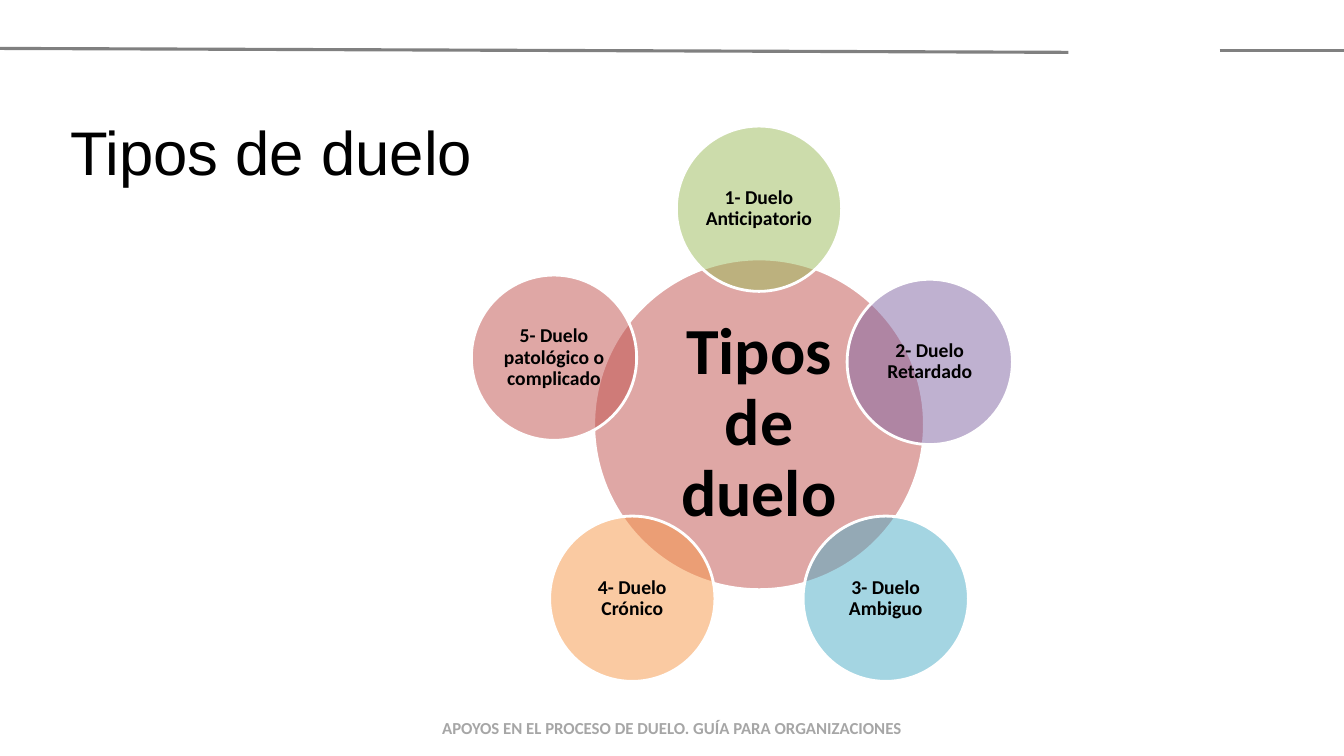
from math import cos, radians, sin

from lxml import etree
from pptx import Presentation
from pptx.dml.color import RGBColor
from pptx.enum import shapes, text
from pptx.oxml.ns import qn
from pptx.util import Pt

TITLE = "Tipos de duelo"
FOOTER = "APOYOS EN EL PROCESO DE DUELO. GUÍA PARA ORGANIZACIONES"
# label, fill, shift from the regular place on the ring
TYPES = [
    ("1- Duelo Anticipatorio", "9BBB59", (0, 0)),
    ("2- Duelo Retardado", "8064A2", (-24.5, 3)),
    ("3- Duelo Ambiguo", "4BACC6", (0, 0)),
    ("4- Duelo Crónico", "F79646", (0, 0)),
    ("5- Duelo patológico o complicado", "C0504D", (0, 0)),
]
RULES = [(0, 34.6, 763.2, 37.4), (871.2, 36, 960, 36)]

WIDTH, HEIGHT = 960, 540
HUB_X, HUB_Y = 542.2, 303.1
HUB_SIZE, TYPE_SIZE, RING_RADIUS = 236.2, 118.1, 154

TITLE_FONT = {"name": "Arial", "size": Pt(44)}
FOOTER_FONT = {"name": "Calibri", "size": Pt(12), "bold": True}
HUB_FONT = {"name": "Calibri", "size": Pt(47), "bold": True}
TYPE_FONT = {"name": "Calibri", "size": Pt(14), "bold": True}


def color(value):
    return RGBColor.from_string(value)


def write(shape, words, font, align, anchor, inset=None, spacing=1.0, ink="000000"):
    frame = shape.text_frame
    frame.word_wrap = True
    frame.vertical_anchor = anchor
    if inset is not None:
        for side in ("left", "top", "right", "bottom"):
            setattr(frame, f"margin_{side}", Pt(inset))
    paragraph = frame.paragraphs[0]
    paragraph.alignment = align
    paragraph.line_spacing = spacing
    run = paragraph.add_run()
    run.text = words
    for name, value in font.items():
        setattr(run.font, name, value)
    run.font.color.rgb = color(ink)


def add_circle(slide, center_x, center_y, size, fill, words, font, inset):
    circle = slide.shapes.add_shape(
        shapes.MSO_SHAPE.OVAL, Pt(center_x - size / 2), Pt(center_y - size / 2),
        Pt(size), Pt(size))
    circle.shadow.inherit = False
    circle.fill.solid()
    circle.fill.fore_color.rgb = color(fill)
    fill_color = circle.fill._xPr.find(qn("a:solidFill"))[0]
    etree.SubElement(fill_color, qn("a:alpha"), val="50000")
    circle.line.color.rgb = color("FFFFFF")
    circle.line.width = Pt(2)
    write(circle, words, font, text.PP_ALIGN.CENTER, text.MSO_ANCHOR.MIDDLE,
          inset, spacing=0.9)


def add_rule(slide, start_x, start_y, end_x, end_y):
    rule = slide.shapes.add_connector(
        shapes.MSO_CONNECTOR.STRAIGHT, Pt(start_x), Pt(start_y), Pt(end_x), Pt(end_y))
    rule.line.color.rgb = color("808080")
    rule.line.width = Pt(2.25)
    etree.SubElement(rule._element.spPr, qn("a:effectLst"))


def main():
    presentation = Presentation()
    presentation.slide_width, presentation.slide_height = Pt(WIDTH), Pt(HEIGHT)
    slide = presentation.slides.add_slide(presentation.slide_layouts[6])

    for rule in RULES:
        add_rule(slide, *rule)
    footer = slide.shapes.add_textbox(Pt(0), Pt(509), Pt(WIDTH), Pt(21.6))
    write(footer, FOOTER, FOOTER_FONT, text.PP_ALIGN.CENTER, text.MSO_ANCHOR.TOP,
          ink="A6A6A6")
    title = slide.shapes.add_textbox(Pt(43.2), Pt(71.3), Pt(648), Pt(72.7))
    write(title, TITLE, TITLE_FONT, text.PP_ALIGN.LEFT, text.MSO_ANCHOR.MIDDLE)

    add_circle(slide, HUB_X, HUB_Y, HUB_SIZE, "C0504D", TITLE, HUB_FONT, 5)
    for index, (label, fill, (shift_x, shift_y)) in enumerate(TYPES):
        angle = radians(index * 360 / len(TYPES))
        add_circle(slide, HUB_X + RING_RADIUS * sin(angle) + shift_x,
                   HUB_Y - RING_RADIUS * cos(angle) + shift_y,
                   TYPE_SIZE, fill, label, TYPE_FONT, 1.4)

    presentation.save("out.pptx")


if __name__ == "__main__":
    main()
